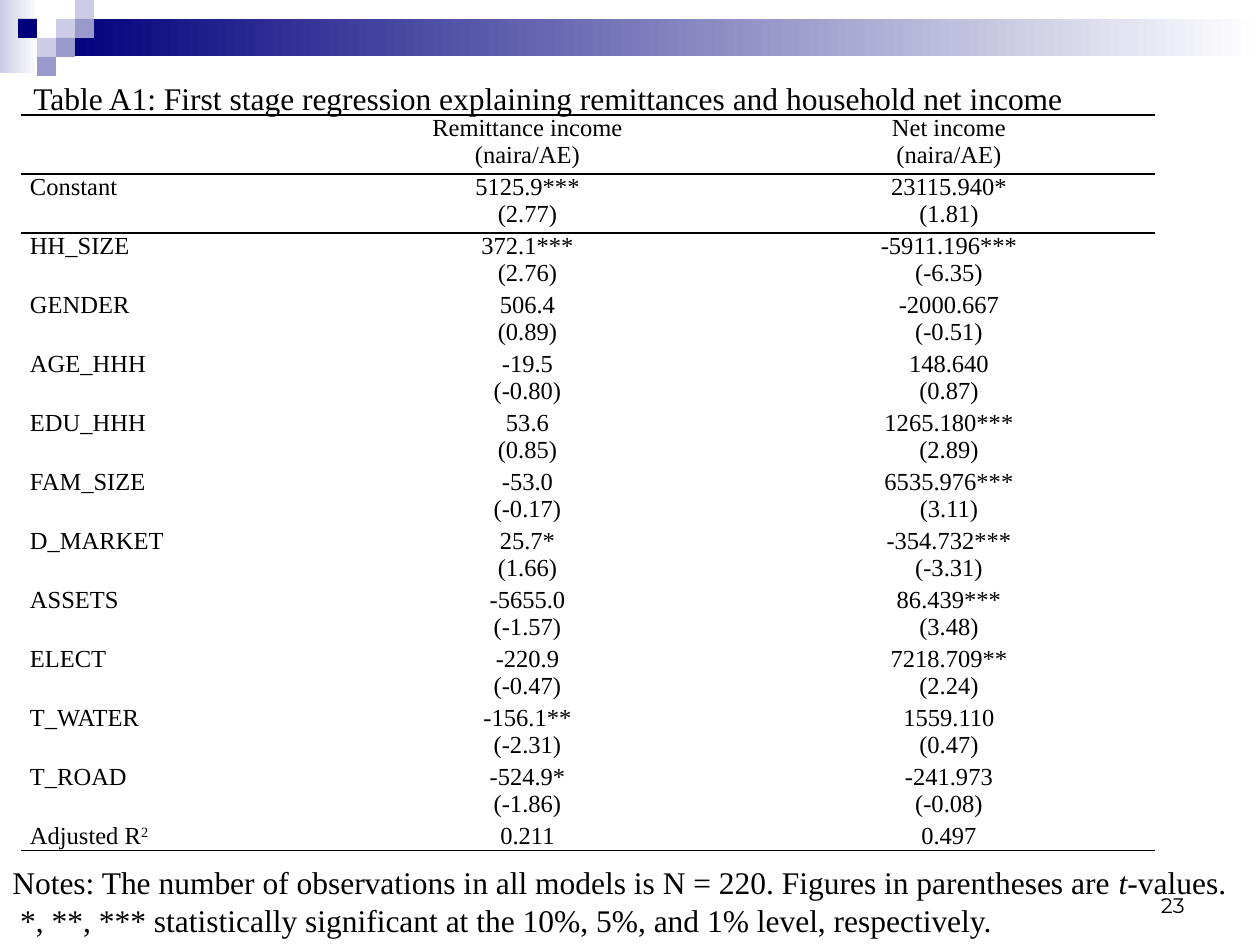
import lxml.etree
import pptx
import pptx.dml.color
import pptx.enum.shapes
import pptx.enum.text
import pptx.oxml.ns
import pptx.util

PX = 914400 // 126
NAVY = pptx.dml.color.RGBColor(0x00, 0x00, 0x7D)
PERIWINKLE = pptx.dml.color.RGBColor(0x99, 0x99, 0xCC)
LAVENDER = pptx.dml.color.RGBColor(0xCC, 0xCC, 0xE6)
WHITE = pptx.dml.color.RGBColor(0xFF, 0xFF, 0xFF)
BLACK = pptx.dml.color.RGBColor(0x00, 0x00, 0x00)
SERIF = "Times New Roman"
ALIGN = pptx.enum.text.PP_ALIGN

presentation = pptx.Presentation()
presentation.slide_width = pptx.util.Inches(10)
presentation.slide_height = pptx.util.Inches(7.5)
slide = presentation.slides.add_slide(presentation.slide_layouts[6])


def add_run(paragraph, text, size, font=SERIF):
    run = paragraph.add_run()
    run.text = text
    run.font.size = pptx.util.Pt(size)
    run.font.name = font
    run.font.color.rgb = BLACK
    return run


def add_rectangle(left, top, width, height, color, fade=False):
    """Add a borderless rectangle, fading to white at the right if asked."""
    shape = slide.shapes.add_shape(
        pptx.enum.shapes.MSO_SHAPE.RECTANGLE,
        left * PX, top * PX, width * PX, height * PX)
    shape.shadow.inherit = False
    shape.line.fill.background()
    if fade:
        shape.fill.gradient()
        shape.fill.gradient_angle = 0
        for stop, stop_color, position in zip(
                shape.fill.gradient_stops, (color, WHITE), (0, 1)):
            stop.color.rgb = stop_color
            stop.position = position
    else:
        shape.fill.solid()
        shape.fill.fore_color.rgb = color


# Header band with its checkered corner
add_rectangle(0, 0, 39, 73, LAVENDER, fade=True)
add_rectangle(57, 19, 1203, 37, NAVY, fade=True)
SQUARE = 19
for column, row, color in [
    (2, 1, LAVENDER), (3, 0, LAVENDER), (3, 1, PERIWINKLE), (1, 2, LAVENDER),
    (0, 1, NAVY), (2, 2, PERIWINKLE), (1, 3, PERIWINKLE),
]:
    add_rectangle(18 + column * SQUARE, row * SQUARE, SQUARE, SQUARE, color)

# Regression table; each tuple in a row holds the lines of one cell
HEADER = ("", ("Remittance income", "(naira/AE)"), ("Net income", "(naira/AE)"))
ESTIMATES = [
    ("Constant", ("5125.9***", "(2.77)"), ("23115.940*", "(1.81)")),
    ("HH_SIZE", ("372.1***", "(2.76)"), ("-5911.196***", "(-6.35)")),
    ("GENDER", ("506.4", "(0.89)"), ("-2000.667", "(-0.51)")),
    ("AGE_HHH", ("-19.5", "(-0.80)"), ("148.640", "(0.87)")),
    ("EDU_HHH", ("53.6", "(0.85)"), ("1265.180***", "(2.89)")),
    ("FAM_SIZE", ("-53.0", "(-0.17)"), ("6535.976***", "(3.11)")),
    ("D_MARKET", ("25.7*", "(1.66)"), ("-354.732***", "(-3.31)")),
    ("ASSETS", ("-5655.0", "(-1.57)"), ("86.439***", "(3.48)")),
    ("ELECT", ("-220.9", "(-0.47)"), ("7218.709**", "(2.24)")),
    ("T_WATER", ("-156.1**", "(-2.31)"), ("1559.110", "(0.47)")),
    ("T_ROAD", ("-524.9*", "(-1.86)"), ("-241.973", "(-0.08)")),
]
FIT = ("Adjusted R", ("0.211",), ("0.497",))
rows = [HEADER, *ESTIMATES, FIT]
COLUMN_WIDTHS = (291, 431, 412)
ROW_HEIGHTS = [59] * (len(rows) - 1) + [28]
BORDERS = {0: ("lnT", "lnB"), 1: ("lnT",), len(rows) - 1: ("lnB",)}
NO_STYLE_NO_GRID = "{2D5ABB26-0587-4C30-8999-92F81FD0307C}"

table = slide.shapes.add_table(
    len(rows), len(COLUMN_WIDTHS), 21 * PX, 115 * PX,
    sum(COLUMN_WIDTHS) * PX, sum(ROW_HEIGHTS) * PX).table
table.first_row = False
table.horz_banding = False
qn = pptx.oxml.ns.qn
table_properties = table.columns[0]._parent._tbl.tblPr
table_properties.find(qn("a:tableStyleId")).text = NO_STYLE_NO_GRID
for column, width in zip(table.columns, COLUMN_WIDTHS):
    column.width = width * PX

for row_index, (values, height) in enumerate(zip(rows, ROW_HEIGHTS)):
    table.rows[row_index].height = height * PX
    for column_index, value in enumerate(values):
        cell = table.cell(row_index, column_index)
        cell.margin_left = cell.margin_right = 9 * PX
        cell.margin_top = cell.margin_bottom = 0
        cell.fill.background()
        lines = (value,) if column_index == 0 else value
        for line_index, line in enumerate(lines):
            frame = cell.text_frame
            paragraph = frame.add_paragraph() if line_index else frame.paragraphs[0]
            paragraph.alignment = ALIGN.CENTER if column_index else ALIGN.JUSTIFY
            add_run(paragraph, line, 14)
        properties = cell._tc.get_or_add_tcPr()
        for position, side in enumerate(BORDERS.get(row_index, ())):
            border = lxml.etree.Element(qn("a:" + side), w="12700")
            fill = lxml.etree.SubElement(border, qn("a:solidFill"))
            lxml.etree.SubElement(fill, qn("a:srgbClr"), val=str(BLACK))
            properties.insert(position, border)

fit_label = table.cell(len(rows) - 1, 0).text_frame.paragraphs[0]
superscript = add_run(fit_label, "2", 14)
superscript.font._element.set("baseline", "30000")

# Title, notes and slide number
title = slide.shapes.add_textbox(21 * PX, 73 * PX, 1207 * PX, 50 * PX)
title.text_frame.word_wrap = True
add_run(title.text_frame.paragraphs[0],
        "Table A1: First stage regression explaining remittances and household net income", 18)

notes = slide.shapes.add_textbox(0, 857 * PX, 1260 * PX, 89 * PX)
notes.text_frame.word_wrap = True
paragraph = notes.text_frame.paragraphs[0]
add_run(paragraph, "Notes: The number of observations in all models is N = 220. "
                   "Figures in parentheses are ", 18)
add_run(paragraph, "t", 18).font.italic = True
add_run(paragraph, "-values.", 18)
add_run(notes.text_frame.add_paragraph(),
        " *, **, *** statistically significant at the 10%, 5%, and 1% level, respectively.", 18)

slide_number = slide.shapes.add_textbox(903 * PX, 861 * PX, 294 * PX, 63 * PX)
slide_number.text_frame.word_wrap = True
slide_number.text_frame.vertical_anchor = pptx.enum.text.MSO_ANCHOR.BOTTOM
paragraph = slide_number.text_frame.paragraphs[0]
paragraph.alignment = ALIGN.RIGHT
add_run(paragraph, "23", 12, "Montserrat")

presentation.save("out.pptx")
